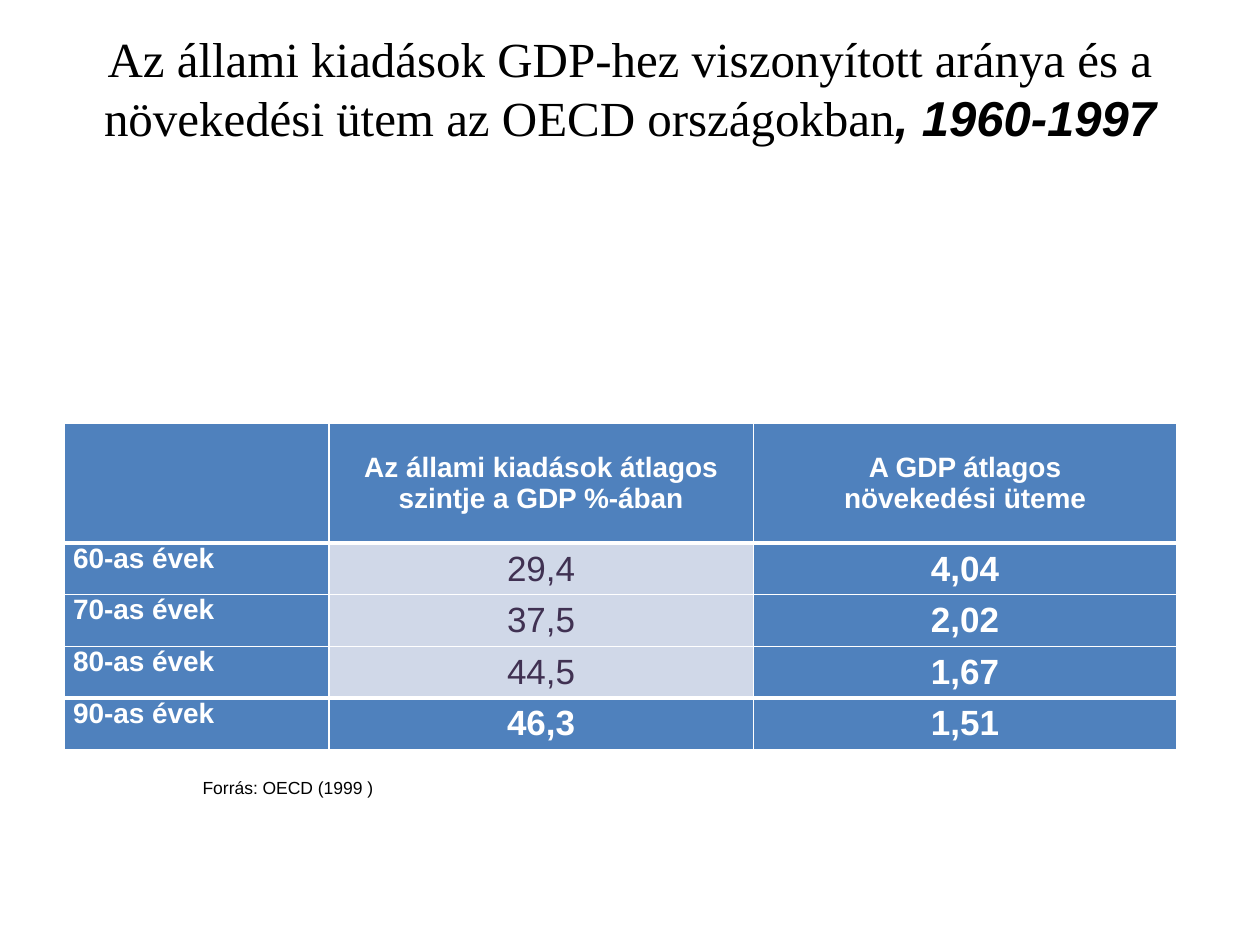
from dataclasses import dataclass

from lxml import etree
from pptx import Presentation
from pptx import util as u
from pptx.dml.color import RGBColor
from pptx.enum import text
from pptx.oxml import ns


@dataclass(frozen=True)
class Theme:
    sans: str = "Arial"
    serif: str = "Times New Roman"
    black: str = "000000"
    white: str = "FFFFFF"
    blue: str = "4F81BD"
    pale: str = "D0D8E8"
    plum: str = "403152"
    title: int = 28
    value: int = 20
    label: int = 16
    note: int = 10
    thin: int = 1
    thick: int = 3


class Deck:
    def __init__(self, theme):
        self.theme = theme
        self.show = Presentation()
        self.show.slide_width = u.Inches(10)
        self.show.slide_height = u.Inches(7.5)
        self.slide = self.show.slides.add_slide(self.show.slide_layouts[5])

    def style(self, run, size, color, face=None, bold=False, slant=False):
        font = run.font
        font.name = face or self.theme.sans
        font.size = u.Pt(size)
        font.bold = bold
        font.italic = slant
        font.color.rgb = RGBColor.from_string(color)

    def title(self, box, plain, strong):
        t = self.theme
        shape = self.slide.shapes.title
        shape.left, shape.top, shape.width, shape.height = map(u.Inches, box)
        frame = shape.text_frame
        frame.word_wrap = True
        frame.auto_size = text.MSO_AUTO_SIZE.NONE
        frame.vertical_anchor = text.MSO_ANCHOR.MIDDLE
        para = frame.paragraphs[0]
        para.alignment = text.PP_ALIGN.CENTER
        lead, tail = para.add_run(), para.add_run()
        lead.text, tail.text = plain, strong
        self.style(lead, t.title, t.black, t.serif)
        self.style(tail, t.title, t.black, bold=True, slant=True)
        para.add_line_break()
        size = str(t.title * 100)
        gap = para._p.find(ns.qn("a:br"))
        etree.SubElement(gap, ns.qn("a:rPr"), sz=size)
        etree.SubElement(para._p, ns.qn("a:endParaRPr"), sz=size)

    def edges(self, cell, top, bottom):
        t = self.theme
        props = cell._tc.get_or_add_tcPr()
        sides = {"L": t.thin, "R": t.thin, "T": top, "B": bottom}
        for side, width in sides.items():
            line = etree.SubElement(props, ns.qn(f"a:ln{side}"), w=str(u.Pt(width)))
            fill = etree.SubElement(line, ns.qn("a:solidFill"))
            etree.SubElement(fill, ns.qn("a:srgbClr"), val=t.white)

    def cell(self, cell, words, row, col, last):
        t = self.theme
        head = row == 0
        pale = col == 1 and 0 < row < last
        self.edges(
            cell,
            t.thick if row in (1, last) else t.thin,
            t.thick if row in (0, last - 1) else t.thin,
        )
        cell.fill.solid()
        cell.fill.fore_color.rgb = RGBColor.from_string(t.pale if pale else t.blue)
        cell.margin_left = cell.margin_right = u.Inches(0.07)
        cell.margin_top = cell.margin_bottom = 0
        if not words:
            return
        middle = head or col > 0
        cell.vertical_anchor = text.MSO_ANCHOR.MIDDLE if middle else text.MSO_ANCHOR.TOP
        cell.text_frame.text = words
        para = cell.text_frame.paragraphs[0]
        para.alignment = text.PP_ALIGN.CENTER if middle else text.PP_ALIGN.LEFT
        para.space_before = u.Pt(6 if head else 1)
        para.space_after = u.Pt(0 if head else 1)
        size = t.label if head or col == 0 else t.value
        for run in para.runs:
            self.style(run, size, t.plum if pale else t.white, bold=not pale)

    def table(self, left, top, cols, rows, data):
        spot = map(u.Inches, (left, top, sum(cols), sum(rows)))
        grid = self.slide.shapes.add_table(len(rows), len(cols), *spot).table
        for col, width in zip(grid.columns, cols):
            col.width = u.Inches(width)
        for row, height in zip(grid.rows, rows):
            row.height = u.Inches(height)
        for r, line in enumerate(data):
            for c, words in enumerate(line):
                self.cell(grid.cell(r, c), words, r, c, len(data) - 1)

    def note(self, box, words):
        t = self.theme
        frame = self.slide.shapes.add_textbox(*map(u.Inches, box)).text_frame
        frame.word_wrap = True
        frame.auto_size = text.MSO_AUTO_SIZE.SHAPE_TO_FIT_TEXT
        frame.text = words
        self.style(frame.paragraphs[0].runs[0], t.note, t.black)


def main():
    deck = Deck(Theme())
    deck.title(
        (0.5, 0.3, 9, 1.25),
        "Az állami kiadások GDP-hez viszonyított aránya és a "
        "növekedési ütem az OECD országokban",
        ", 1960-1997",
    )
    data = [
        ("", "Az állami kiadások átlagos szintje a GDP %-ában",
         "A GDP átlagos\vnövekedési üteme"),
        ("60-as évek", "29,4", "4,04"),
        ("70-as évek", "37,5", "2,02"),
        ("80-as évek", "44,5", "1,67"),
        ("90-as évek", "46,3", "1,51"),
    ]
    deck.table(0.51, 3.36, (2.1, 3.37, 3.36), [0.95] + [0.41] * 4, data)
    deck.note((1.51, 6.12, 1.6, 0.27), "Forrás: OECD (1999 )")
    deck.show.save("out.pptx")


if __name__ == "__main__":
    main()
